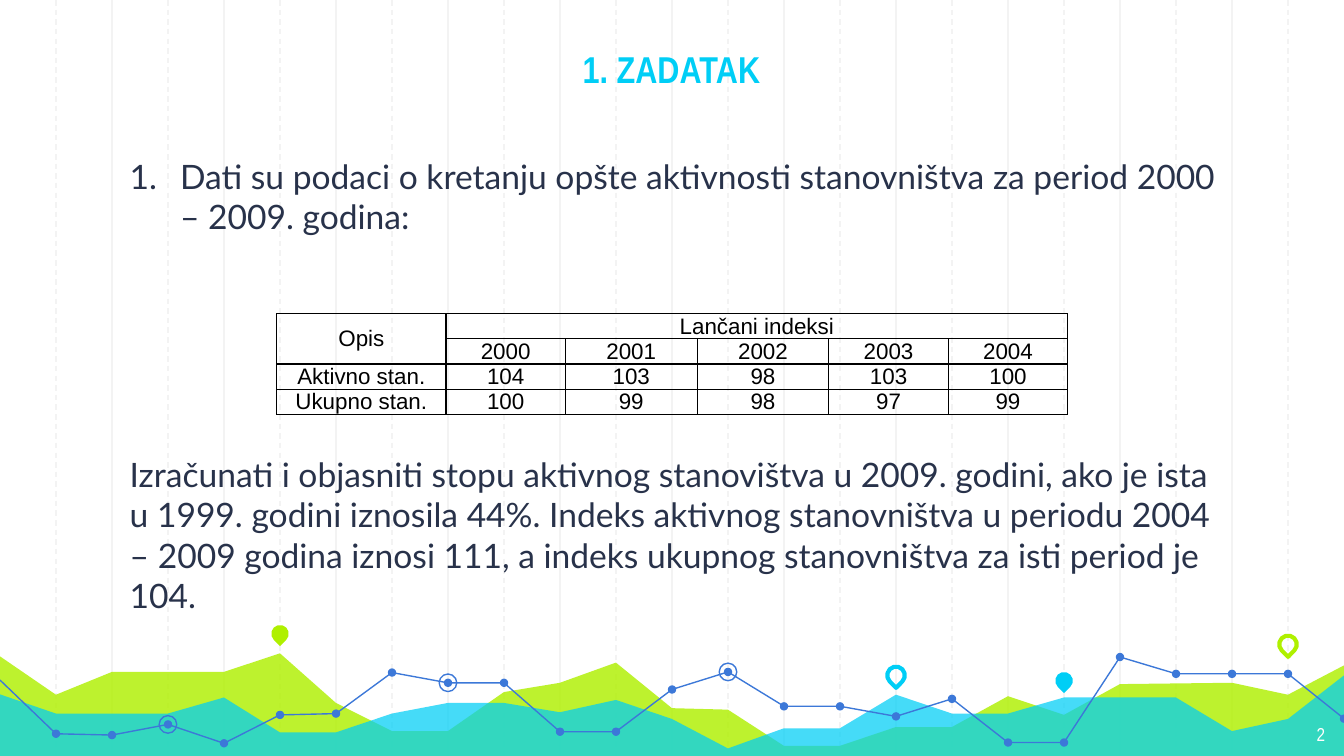
from lxml.etree import SubElement
from pptx import Presentation
from pptx.dml.color import RGBColor
from pptx.enum.dml import MSO_LINE
from pptx.enum.shapes import MSO_CONNECTOR, MSO_SHAPE
from pptx.enum.text import MSO_ANCHOR, MSO_AUTO_SIZE, PP_ALIGN
from pptx.oxml.ns import qn
from pptx.util import Pt

WIDTH, HEIGHT = 720, 405
STEP = 30  # distance between the vertical grid lines
LIME, CYAN, BLUE = "AFF000", "00CEF6", "3C78D8"
GREY, INK, BLACK, WHITE = "F3F3F3", "28324A", "000000", "FFFFFF"

# Landscape outlines as (grid column, height) pairs
LIME_HILLS = [(0, 350.6), (1, 372.2), (2, 360), (4, 360), (5, 350), (6, 376.6), (7, 391.7),
              (8, 391.7), (9, 370.8), (10, 365.8), (11, 355), (12, 379.4), (13, 380.2),
              (14, 399.6), (15, 399.6), (16, 389.5), (17, 389.5), (18, 373), (19, 383),
              (20, 366.5), (22, 365.8), (23, 372.2), (24, 355.7)]
CYAN_HILLS = [(0, 371.5), (1, 382.3), (3, 382.3), (4, 373.7), (5, 392.4), (6, 392.4),
              (7, 382.3), (8, 376.6), (9, 376.6), (10, 381.6), (11, 375), (12, 385.2),
              (13, 401), (14, 390.2), (15, 390.2), (16, 372.2), (17, 382.3), (18, 382.3),
              (19, 373.7), (21, 373.7), (22, 391.7), (23, 385.2), (24, 360.7)]
# Height of the trend line at each grid column
TREND = [364.3, 393.1, 393.8, 388.1, 398.2, 383, 382.3, 360.3, 365.8, 365.8, 392, 392, 369.4,
         360, 378.4, 378.4, 383.8, 374.4, 397.8, 397.8, 352, 361, 361, 361, 385]
RINGED_COLUMNS = (8, 3, 13)
PINS = [(5, 339.5, LIME, True), (16, 361.8, CYAN, False),
        (19, 364.7, CYAN, True), (23, 345.2, LIME, False)]

INDEX_ROWS = [["Opis", "Lančani indeksi", "", "", "", ""],
              ["", "2000", "2001", "2002", "2003", "2004"],
              ["Aktivno stan.", "104", "103", "98", "103", "100"],
              ["Ukupno stan.", "100", "99", "98", "97", "99"]]
COLUMN_WIDTHS = [90.6, 64, 70.6, 70.6, 64, 64]
ROW_HEIGHT = 13.5


def rgb(value):
    return RGBColor.from_string(value)


def write_text(paragraph, text, size, font, color, bold=False, align=PP_ALIGN.LEFT, before=0):
    paragraph.alignment = align
    paragraph.space_before = Pt(before)
    run = paragraph.add_run()
    run.text = text
    run.font.size, run.font.name, run.font.bold = Pt(size), font, bold
    run.font.color.rgb = rgb(color)


def set_frame(frame, anchor=MSO_ANCHOR.TOP):
    frame.word_wrap = True
    frame.auto_size = MSO_AUTO_SIZE.NONE
    frame.vertical_anchor = anchor
    frame.margin_left = frame.margin_right = frame.margin_top = frame.margin_bottom = Pt(7.2)


def place(part, box):
    part.left, part.top, part.width, part.height = map(Pt, box)


def paint(shape, fill=None, line=None, weight=0.75, opacity=100):
    shape.shadow.inherit = False
    if fill:
        shape.fill.solid()
        shape.fill.fore_color.rgb = rgb(fill)
        if opacity < 100:
            color = shape.fill._xPr.find(".//" + qn("a:srgbClr"))
            SubElement(color, qn("a:alpha"), val=str(opacity * 1000))
    else:
        shape.fill.background()
    if line:
        shape.line.color.rgb = rgb(line)
        shape.line.width = Pt(weight)
    else:
        shape.line.fill.background()


def add_mark(shapes, kind, column, y, size, **look):
    mark = shapes.add_shape(kind, Pt(column * STEP - size / 2), Pt(y - size / 2),
                            Pt(size), Pt(size))
    paint(mark, **look)
    return mark


def add_outline(shapes, points, close, **look):
    start, *others = [(Pt(x), Pt(y)) for x, y in points]
    builder = shapes.build_freeform(*start, scale=1.0)
    builder.add_line_segments(others, close=close)
    paint(builder.convert_to_shape(), **look)


def add_grid(slide, box):
    left, top, width, height = box
    group = slide.shapes.add_group_shape().shapes
    count = width // STEP
    for column in [*range(2, count, 2), *range(1, count, 2)]:
        x = Pt(left + column * STEP)
        rule = group.add_connector(MSO_CONNECTOR.STRAIGHT, x, Pt(top), x, Pt(top + height))
        rule.line.color.rgb = rgb(GREY)
        rule.line.width = Pt(0.75)
        if column % 2:
            rule.line.dash_style = MSO_LINE.DASH
        SubElement(rule._element.spPr, qn("a:effectLst"))


def add_landscape(slide, box):
    left, top, width, height = box
    shapes = slide.shapes
    overhang, bottom = 1.5, top + height

    # Translucent hills, reaching slightly past both edges
    for hills, color, opacity in ((LIME_HILLS, LIME, 82), (CYAN_HILLS, CYAN, 73)):
        ridge = [(min(max(left + column * STEP, left - overhang), left + width), y)
                 for column, y in hills]
        ridge[0] = (left - overhang, ridge[0][1])
        ridge[-1] = (left + width + overhang, ridge[-1][1])
        base = [(left + width + overhang, bottom), (left - overhang, bottom)]
        add_outline(shapes, ridge + base, True, fill=color, opacity=opacity)

    # Pins
    for column, y, color, solid in PINS:
        look = {"fill": color} if solid else {"line": color, "weight": 2.25}
        add_mark(shapes, MSO_SHAPE.TEAR, column, y, 9.4, **look).rotation = 135

    # Trend line in three stretches, with its dots and rings
    trend = [(left + column * STEP, y) for column, y in enumerate(TREND)]
    stretches = shapes.add_group_shape().shapes
    for first, last in ((0, 11), (11, 20), (20, 24)):
        add_outline(stretches, trend[first:last + 1], False, line=BLUE)
    dots = shapes.add_group_shape().shapes
    for column, y in enumerate(TREND[1:], start=1):
        add_mark(dots, MSO_SHAPE.OVAL, column, y, 4.5, fill=BLUE)
    for column in RINGED_COLUMNS:
        add_mark(shapes, MSO_SHAPE.OVAL, column, TREND[column], 9.4, line=BLUE)


def add_page_number(slide, box):
    number = slide.shapes.add_textbox(*map(Pt, box))
    set_frame(number.text_frame)
    write_text(number.text_frame.paragraphs[0], "2", size=10, font="Arial Narrow",
               color=WHITE, align=PP_ALIGN.RIGHT)


def set_indent(paragraph, left, first):
    properties = paragraph._p.get_or_add_pPr()
    properties.set("marL", str(Pt(left)))
    properties.set("indent", str(Pt(first)))
    return properties


def fill_body(slide, box):
    body = slide.placeholders[1]
    place(body, box)
    body.element.getparent().append(body.element)  # in front of the landscape
    set_frame(body.text_frame)
    look = {"size": 18, "font": "Lato", "color": INK}

    task = body.text_frame.paragraphs[0]
    properties = set_indent(task, 36, -27)
    bullet_color = SubElement(properties, qn("a:buClr"))
    SubElement(bullet_color, qn("a:srgbClr"), val=INK)
    SubElement(properties, qn("a:buAutoNum"), type="arabicPeriod")
    write_text(task, "Dati su podaci o kretanju opšte aktivnosti stanovništva za period "
               "2000 – 2009. godina:", **look)

    question = body.text_frame.add_paragraph()
    SubElement(set_indent(question, 9, 0), qn("a:buNone"))
    write_text(question, "Izračunati i objasniti stopu aktivnog stanovištva u 2009. godini, "
               "ako je ista u 1999. godini iznosila 44%. Indeks aktivnog stanovništva u "
               "periodu 2004 – 2009 godina iznosi 111, a indeks ukupnog stanovništva za "
               "isti period je 104.", before=116.4, **look)  # leaves room for the table


def fill_title(slide, box):
    title = slide.shapes.title
    place(title, box)
    title.element.getparent().append(title.element)
    set_frame(title.text_frame, MSO_ANCHOR.BOTTOM)
    write_text(title.text_frame.paragraphs[0], "1. ZADATAK", size=20, font="Arial Narrow",
               color=CYAN, bold=True, align=PP_ALIGN.CENTER)


def add_borders(cell):
    properties = cell._tc.get_or_add_tcPr()
    for side in ("a:lnL", "a:lnR", "a:lnT", "a:lnB"):
        border = SubElement(properties, qn(side), w=str(Pt(0.75)))
        SubElement(SubElement(border, qn("a:solidFill")), qn("a:srgbClr"), val=BLACK)


def add_index_table(slide, box):
    table = slide.shapes.add_table(len(INDEX_ROWS), len(COLUMN_WIDTHS), *map(Pt, box)).table
    table.first_row = table.horz_banding = False
    for column, width in zip(table.columns, COLUMN_WIDTHS):
        column.width = Pt(width)
    for row, texts in zip(table.rows, INDEX_ROWS):
        row.height = Pt(ROW_HEIGHT)
        for cell, text in zip(row.cells, texts):
            add_borders(cell)
            cell.fill.background()
            cell.margin_left = cell.margin_right = Pt(5)
            cell.margin_top = cell.margin_bottom = 0
            cell.vertical_anchor = MSO_ANCHOR.MIDDLE
            if text:
                write_text(cell.text_frame.paragraphs[0], text, size=12, font="Arial",
                           color=BLACK, align=PP_ALIGN.CENTER)
    table.cell(0, 0).merge(table.cell(1, 0))
    table.cell(0, 1).merge(table.cell(0, 5))


def main():
    prs = Presentation()
    prs.slide_width, prs.slide_height = Pt(WIDTH), Pt(HEIGHT)
    slide = prs.slides.add_slide(prs.slide_layouts[1])
    add_grid(slide, (0, 0, WIDTH, 406.8))
    add_landscape(slide, (0, 350, WIDTH, 56.5))
    add_page_number(slide, (674, 380, 43, 25))
    fill_body(slide, (53.3, 76.3, 612, 240))
    fill_title(slide, (84.2, 0, 551, 56))
    add_index_table(slide, (148.3, 168, sum(COLUMN_WIDTHS), ROW_HEIGHT * len(INDEX_ROWS)))
    prs.save("out.pptx")


if __name__ == "__main__":
    main()
